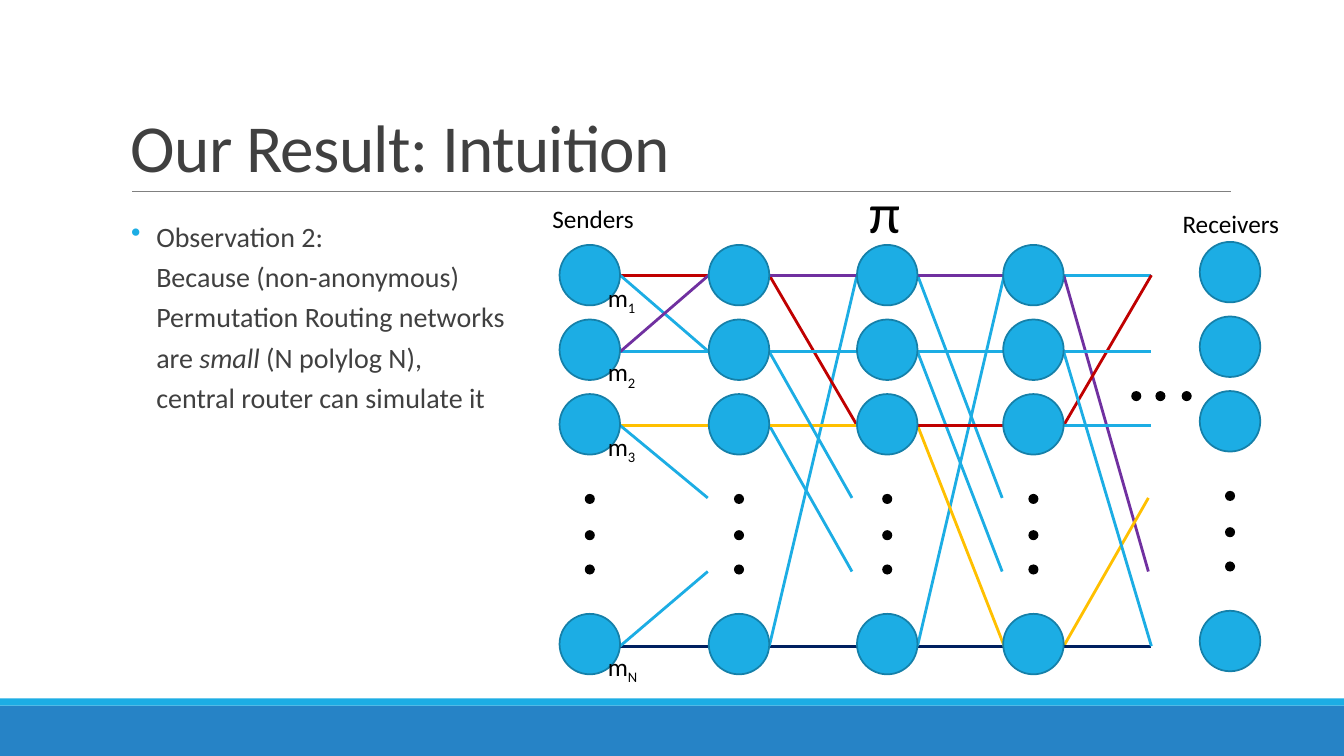
from lxml import etree
from pptx import Presentation
from pptx.dml.color import RGBColor
from pptx.enum.shapes import MSO_CONNECTOR, MSO_SHAPE
from pptx.enum.text import MSO_ANCHOR, MSO_AUTO_SIZE
from pptx.oxml.ns import qn
from pptx.util import Emu, Pt

PX = 9144
RECT, OVAL = MSO_SHAPE.RECTANGLE, MSO_SHAPE.OVAL
STRAIGHT = MSO_CONNECTOR.STRAIGHT
BOTTOM = MSO_ANCHOR.BOTTOM
GROW = MSO_AUTO_SIZE.SHAPE_TO_FIT_TEXT

COLOURS = {
    "blue": "1CADE4", "rim": "1580A9", "footer": "2683C6", "rule": "808080",
    "heading": "404040", "black": "000000", "red": "C00000",
    "purple": "7030A0", "gold": "FFC000", "navy": "002060",
}
TITLE = {"name": "Calibri", "size": Pt(48)}
BODY = {"name": "Calibri", "size": Pt(20)}
LABEL = {"name": "Calibri", "size": Pt(18)}
SYMBOL = {"name": "Calibri", "size": Pt(40)}

NODE, DOT = 60, 10
NODE_TOPS = [243, 317, 391, 609]
DOT_TOPS = [490, 526, 560]
COLUMN_LEFTS = [555, 703, 850, 995]
RECEIVER_LEFT, RECEIVER_RISE = 1190, 3
ROW_Y = {"1": 273, "2": 349, "3": 422, "upper": 494, "lower": 567, "N": 641}

STAGES = [
    (615, 703, 702, "1-1 red,2-2 blue,3-3 gold,N-N navy,"
                    "1-2 blue,3-upper blue,N-lower blue,2-1 purple"),
    (763, 850, 845, "N-N navy,N-1 blue,1-3 red,3-lower blue,"
                    "1-1 purple,3-3 gold,2-2 blue,2-upper blue"),
    (910, 996, 994, "2-lower blue,N-N navy,N-1 blue,1-upper blue,"
                    "3-N gold,1-1 purple,3-3 red,2-2 blue"),
    (1055, 1142, 1139, "1-1 blue,1-lower purple,N-upper gold,3-1 red,"
                       "N-N navy,3-3 blue,2-2 blue,2-N blue"),
]


def px(*lengths):
    return [Emu(length * PX) for length in lengths]


def colour(name):
    return RGBColor.from_string(COLOURS[name])


def add_filled(slide, preset, box, fill, rim=None):
    shape = slide.shapes.add_shape(preset, *px(*box))
    shape.shadow.inherit = False
    shape.fill.solid()
    shape.fill.fore_color.rgb = colour(fill)
    if rim:
        shape.line.color.rgb = colour(rim)
        shape.line.width = Pt(1.25)
    else:
        shape.line.fill.background()


def add_line(slide, ends, stroke, width):
    line = slide.shapes.add_connector(STRAIGHT, *px(*ends))
    line.line.color.rgb = colour(stroke)
    line.line.width = Pt(width)
    etree.SubElement(line._element.spPr, qn("a:effectLst"))


def add_frame(slide, box):
    frame = slide.shapes.add_textbox(*px(*box)).text_frame
    frame.word_wrap = True
    return frame


def add_run(paragraph, text, formats, ink):
    run = paragraph.add_run()
    run.text = text
    for attribute, value in formats.items():
        setattr(run.font, attribute, value)
    run.font.color.rgb = colour(ink)
    return run


def add_label(slide, box, text, formats, subscript=""):
    frame = add_frame(slide, box)
    frame.auto_size = GROW
    paragraph = frame.paragraphs[0]
    add_run(paragraph, text, formats, "black")
    if subscript:
        lowered = add_run(paragraph, subscript, formats, "black")
        lowered.font._element.set("baseline", "-25000")


def add_title(slide, text):
    frame = add_frame(slide, (120, 31, 1100, 159))
    frame.vertical_anchor = BOTTOM
    paragraph = frame.paragraphs[0]
    paragraph.line_spacing = 0.85
    heading = add_run(paragraph, text, TITLE, "heading")
    heading.font._element.set("spc", "-50")


def add_observation(slide, lines):
    frame = add_frame(slide, (117, 206, 415, 440))
    frame.margin_left = frame.margin_right = 0
    paragraph = frame.paragraphs[0]
    properties = paragraph._p.get_or_add_pPr()
    properties.set("marL", str(38 * PX))
    properties.set("indent", str(-25 * PX))
    bullet_colour = etree.SubElement(properties, qn("a:buClr"))
    etree.SubElement(bullet_colour, qn("a:srgbClr"), val=COLOURS["blue"])
    etree.SubElement(properties, qn("a:buChar"), char="•")
    paragraph.line_spacing = 1.2
    paragraph.space_after = Pt(2)
    for attribute, value in BODY.items():
        setattr(paragraph.font, attribute, value)
    for number, line in enumerate(lines):
        if number:
            paragraph.add_line_break()
        for text, italic in line:
            add_run(paragraph, text, {**BODY, "italic": italic}, "heading")


def add_column(slide, left, rise=0):
    for top in NODE_TOPS:
        add_filled(slide, OVAL, (left, top - rise, NODE, NODE), "blue", "rim")
    for top in DOT_TOPS:
        dot_left = left + (NODE - DOT) // 2
        add_filled(slide, OVAL, (dot_left, top - rise, DOT, DOT), "black")


def add_stage(slide, start, end, gap_end, links):
    for link in links.split(","):
        route, stroke = link.split()
        source, target = route.split("-")
        stop = gap_end if target in ("upper", "lower") else end
        add_line(slide, (start, ROW_Y[source], stop, ROW_Y[target]), stroke, 2)


def main():
    deck = Presentation()
    deck.slide_width, deck.slide_height = px(1333, 750)
    slide = deck.slides.add_slide(deck.slide_layouts[6])

    add_filled(slide, RECT, (0, 700, 1333, 50), "footer")
    add_filled(slide, RECT, (0, 693, 1333, 7), "blue")
    add_line(slide, (131, 190, 1221, 190), "rule", 0.5)
    add_title(slide, "Our Result: Intuition")
    add_observation(slide, [
        [("Observation 2:", False)],
        [("Because (non-anonymous) Permutation Routing networks are ", False),
         ("small", True), (" (N polylog N),", False)],
        [("central router can simulate it", False)],
    ])

    for stage in STAGES:
        add_stage(slide, *stage)
    for left in COLUMN_LEFTS:
        add_column(slide, left)
    add_column(slide, RECEIVER_LEFT, RECEIVER_RISE)
    for left in (1122, 1146, 1172):
        add_filled(slide, OVAL, (left, 388, DOT, DOT), "black")

    add_label(slide, (538, 197, 141, 40), "Senders", LABEL)
    add_label(slide, (1163, 202, 141, 40), "Receivers", LABEL)
    add_label(slide, (853, 171, 73, 77), "π", SYMBOL)
    for top, index in zip(NODE_TOPS, "123N"):
        add_label(slide, (593, top + 32, 60, 40), "m", LABEL, index)

    deck.save("out.pptx")


if __name__ == "__main__":
    main()
